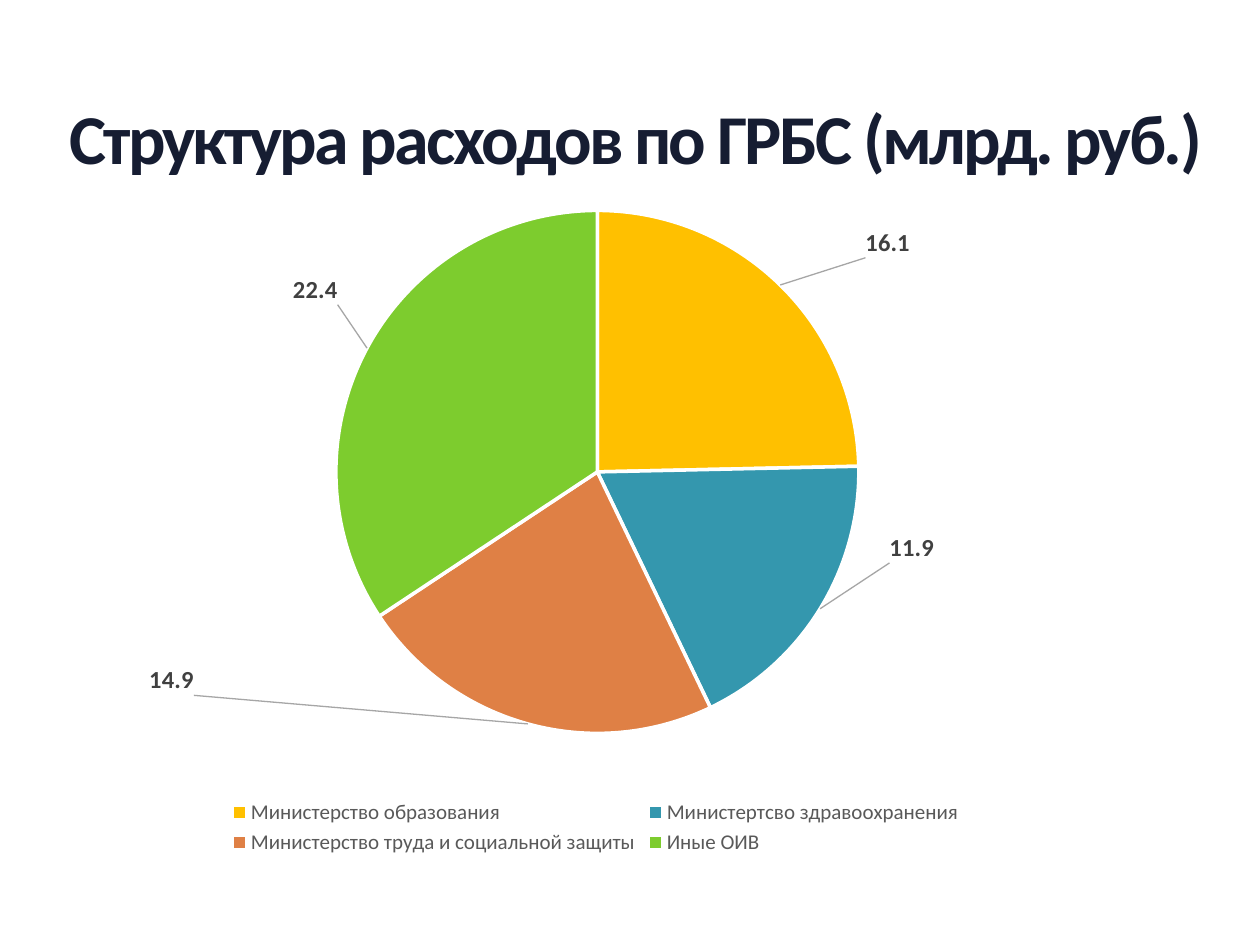
"""Build a slide with a pie chart of spending by ministry."""
from lxml.etree import SubElement
from pptx import Presentation
from pptx.chart.data import CategoryChartData
from pptx.dml.color import RGBColor
from pptx.enum.chart import XL_CHART_TYPE, XL_LABEL_POSITION, XL_LEGEND_POSITION
from pptx.enum.text import MSO_ANCHOR, PP_ALIGN
from pptx.oxml import parse_xml
from pptx.oxml.ns import nsdecls
from pptx.util import Pt

PX = 914400 // 126
FONT = "Calibri"
NAVY = RGBColor(0x16, 0x1D, 0x32)
WHITE = RGBColor(0xFF, 0xFF, 0xFF)
DARK = RGBColor(0x40, 0x40, 0x40)
GREY = RGBColor(0x59, 0x59, 0x59)
SILVER = RGBColor(0xA6, 0xA6, 0xA6)
GOLD = RGBColor(0xFF, 0xC0, 0x00)
TEAL = RGBColor(0x34, 0x97, 0xAE)
ORANGE = RGBColor(0xDF, 0x80, 0x45)
GREEN = RGBColor(0x7D, 0xCC, 0x2E)

TITLE = "Структура расходов по ГРБС (млрд. руб.)"
TITLE_BOX = (25, 89, 1221, 106)
CHART_BOX = (25, 193, 1142, 667)
PIE_BOX = (336, 210, 523, 524)
# name, value, colour, label shift in px
SLICES = [
    ("Министерство образования", 16.1, GOLD, (80, -22)),
    ("Министертсво здравоохранения", 11.9, TEAL, (63, -80)),
    ("Министерство труда и социальной защиты", 14.9, ORANGE, (-332, -66)),
    ("Иные ОИВ", 22.4, GREEN, (-23, -40)),
]


def emu(box):
    return [v * PX for v in box]


def set_font(font, size, color, bold=False):
    font.name, font.size, font.bold = FONT, Pt(size), bold
    font.color.rgb = color


def add_text(s, text, box, size, color, bold=False, spacing=0, line=1.0):
    tf = s.shapes.add_textbox(*emu(box)).text_frame
    tf.word_wrap = True
    tf.vertical_anchor = MSO_ANCHOR.MIDDLE
    tf.margin_left = tf.margin_right = tf.margin_top = tf.margin_bottom = 0
    p = tf.paragraphs[0]
    p.alignment, p.line_spacing = PP_ALIGN.CENTER, line
    r = p.add_run()
    r.text = text
    set_font(r.font, size, color, bold)
    r._r.get_or_add_rPr().set("spc", str(int(spacing * 100)))


def layout(fields):
    items = "".join(f'<c:{k} val="{v}"/>' for k, v in fields.items())
    return parse_xml(f'<c:layout {nsdecls("c")}><c:manualLayout>{items}</c:manualLayout></c:layout>')


def add_pie(s):
    left, top, width, height = CHART_BOX
    data = CategoryChartData()
    data.categories = [name for name, *_ in SLICES]
    data.add_series("Series 1", [value for _, value, *_ in SLICES])
    chart = s.shapes.add_chart(XL_CHART_TYPE.PIE, *emu(CHART_BOX), data).chart
    chart.has_title = False
    chart.font.name, chart.font.size = FONT, Pt(10)
    chart.has_legend = True
    chart.legend.position = XL_LEGEND_POSITION.BOTTOM
    chart.legend.include_in_layout = False
    set_font(chart.legend.font, 12, GREY)

    plot = chart.plots[0]
    plot.vary_by_categories = True
    series = plot.series[0]
    labels = series.data_labels
    labels.show_value = True
    labels.position = XL_LABEL_POSITION.OUTSIDE_END
    set_font(labels.font, 14, DARK, True)
    for i, (_, _, color, (dx, dy)) in enumerate(SLICES):
        point = series.points[i]
        point.format.fill.solid()
        point.format.fill.fore_color.rgb = color
        point.format.line.color.rgb = WHITE
        point.format.line.width = Pt(2)
        label = point.data_label
        label.position = XL_LABEL_POSITION.OUTSIDE_END
        set_font(label.font, 14, DARK, True)
        idx = chart._chartSpace.xpath(f'.//c:dLbl/c:idx[@val="{i}"]')[0]
        idx.addnext(layout({"x": round(dx / width, 4), "y": round(dy / height, 4)}))

    dlbls = chart._chartSpace.xpath(".//c:ser/c:dLbls")[0]
    show = dlbls.xpath("c:showLeaderLines")
    flag = show[0] if show else SubElement(dlbls, dlbls.tag.replace("dLbls", "showLeaderLines"))
    flag.set("val", "1")
    flag.addnext(parse_xml(
        f'<c:leaderLines {nsdecls("c", "a")}><c:spPr><a:ln w="9525"><a:solidFill>'
        f'<a:srgbClr val="{SILVER}"/></a:solidFill></a:ln></c:spPr></c:leaderLines>'))

    x, y, w, h = PIE_BOX
    area = chart._chartSpace.xpath(".//c:plotArea")[0]
    for old in area.xpath("c:layout"):
        area.remove(old)
    area.insert(0, layout({
        "layoutTarget": "inner", "xMode": "edge", "yMode": "edge",
        "x": round((x - left) / width, 4), "y": round((y - top) / height, 4),
        "w": round(w / width, 4), "h": round(h / height, 4)}))


def main():
    prs = Presentation()
    prs.slide_width, prs.slide_height = 1260 * PX, 945 * PX
    s = prs.slides.add_slide(prs.slide_layouts[6])
    add_text(s, TITLE, TITLE_BOX, 40, NAVY, bold=True, spacing=-1.5, line=0.9)
    add_pie(s)
    prs.save("out.pptx")


if __name__ == "__main__":
    main()
